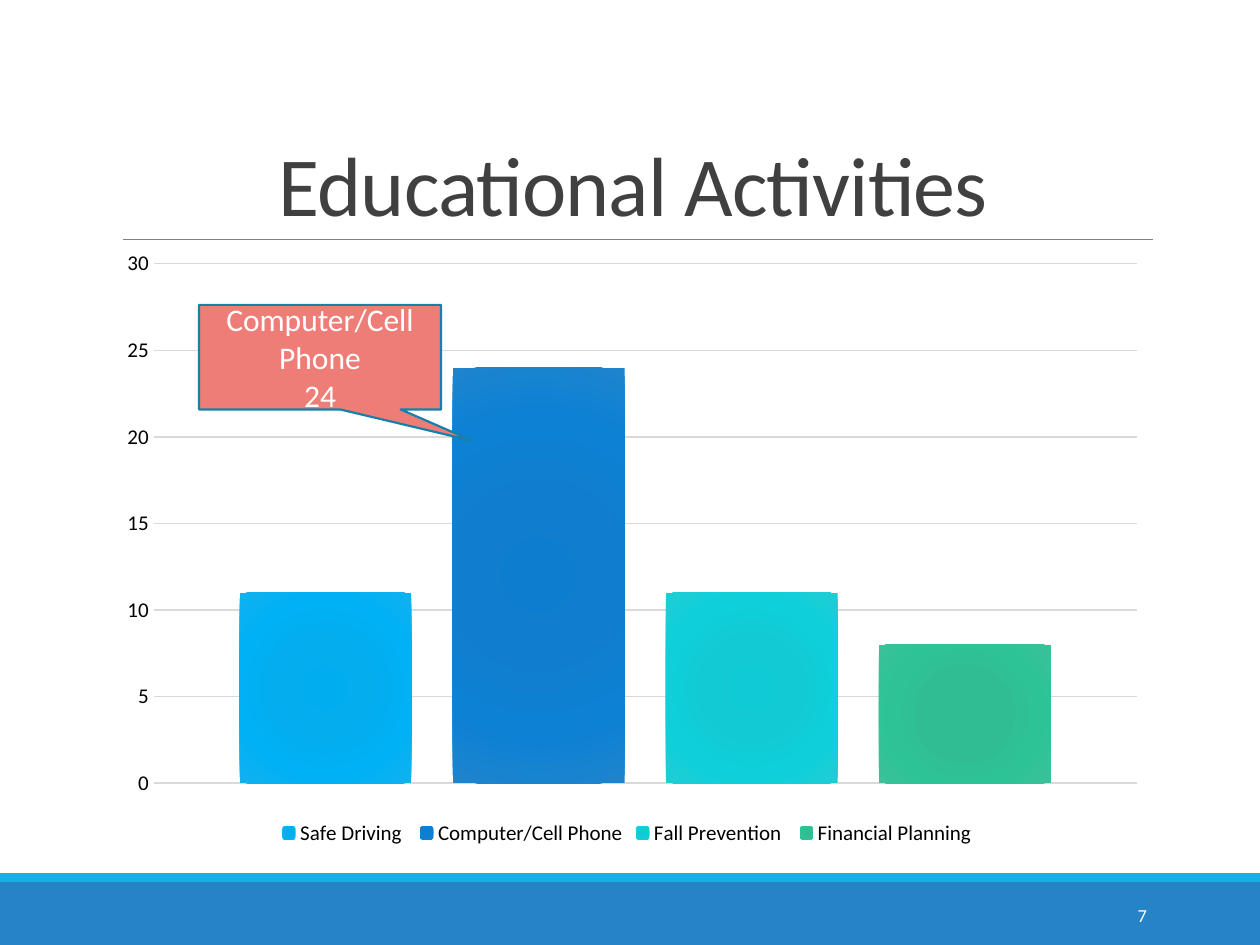
from lxml import etree
from pptx import Presentation
from pptx.chart.data import CategoryChartData
from pptx.dml.color import RGBColor
from pptx.enum.chart import XL_CHART_TYPE, XL_LEGEND_POSITION, XL_TICK_MARK
from pptx.enum.shapes import MSO_CONNECTOR, MSO_SHAPE
from pptx.enum.text import MSO_ANCHOR, PP_ALIGN
from pptx.oxml import parse_xml
from pptx.oxml.ns import nsdecls, qn
from pptx.util import Inches, Pt

FONT = "Calibri"
WHITE = RGBColor(0xFF, 0xFF, 0xFF)
BLACK = RGBColor(0, 0, 0)
TITLE_GRAY = RGBColor(0x40, 0x40, 0x40)
RULE_GRAY = RGBColor(0x80, 0x80, 0x80)
GRID_GRAY = RGBColor(0xD9, 0xD9, 0xD9)
BAND_BLUE = RGBColor(0x26, 0x83, 0xC6)
STRIPE_BLUE = RGBColor(0x1C, 0xAD, 0xE4)
CALLOUT_RED = RGBColor(0xEE, 0x7D, 0x77)
CALLOUT_EDGE = RGBColor(0x15, 0x80, 0xA9)

GRADIENT_STOPS = (0, 34, 70, 100)
ACTIVITIES = [
    ("Safe Driving ", 11, ("00ADEF", "03ADEE", "00B1F5", "12B1EE")),
    ("Computer/Cell Phone", 24, ("0D7ECF", "117ECD", "0D81D4", "1E84CE")),
    ("Fall Prevention ", 11, ("0ECBD5", "12CAD3", "0FD0DA", "20CBD4")),
    ("Financial Planning ", 8, ("2DBE94", "30BD94", "2EC397", "3CC09A")),
]


def inches(*lengths):
    return [Inches(length) for length in lengths]


def write_text(frame, text, size, color, align, anchor, line_spacing=None, tracking=None):
    frame.word_wrap = True
    frame.vertical_anchor = anchor
    frame.text = text
    for paragraph in frame.paragraphs:
        paragraph.alignment = align
        paragraph.line_spacing = line_spacing
        for run in paragraph.runs:
            run.font.name = FONT
            run.font.size = Pt(size)
            run.font.color.rgb = color
            if tracking is not None:
                run.font._element.set("spc", str(int(tracking * 100)))


def style_font(font, size):
    font.name = FONT
    font.size = Pt(size)
    font.color.rgb = BLACK


def add_block(slide, preset, box, fill):
    block = slide.shapes.add_shape(preset, *inches(*box))
    block.shadow.inherit = False
    block.fill.solid()
    block.fill.fore_color.rgb = fill
    block.line.fill.background()
    return block


def add_footer(slide, left, top, width, height):
    stripe = 0.07
    add_block(slide, MSO_SHAPE.RECTANGLE, (left, top + stripe, width, height - stripe), BAND_BLUE)
    add_block(slide, MSO_SHAPE.RECTANGLE, (left, top, width, stripe), STRIPE_BLUE)
    page_number = slide.shapes.add_textbox(*inches(left + 8.12, top + 0.13, 1.08, 0.4))
    write_text(page_number.text_frame, "7", size=10.5, color=WHITE,
               align=PP_ALIGN.RIGHT, anchor=MSO_ANCHOR.MIDDLE)


def add_title(slide, left, top, width, height):
    bottom = top + height
    rule = slide.shapes.add_connector(
        MSO_CONNECTOR.STRAIGHT, *inches(left + 0.08, bottom, left + width, bottom))
    rule.line.color.rgb = RULE_GRAY
    rule.line.width = Pt(0.5)
    etree.SubElement(rule._element.spPr, qn("a:effectLst"))
    title = slide.shapes.add_textbox(*inches(left, top, width, height))
    write_text(title.text_frame, "Educational Activities", size=48, color=TITLE_GRAY,
               align=PP_ALIGN.CENTER, anchor=MSO_ANCHOR.BOTTOM,
               line_spacing=0.85, tracking=-0.5)


def fill_radial(series, colors):
    stops = "".join(
        f'<a:gs pos="{position * 1000}"><a:srgbClr val="{color}"/></a:gs>'
        for position, color in zip(GRADIENT_STOPS, colors))
    series._element.get_or_add_spPr().append(parse_xml(
        f'<a:gradFill {nsdecls("a")} rotWithShape="1"><a:gsLst>{stops}</a:gsLst>'
        '<a:path path="circle"><a:fillToRect l="100000" t="100000" r="100000" b="100000"/>'
        '</a:path></a:gradFill>'))


def set_plot_layout(chart, x, y, w, h):
    plot_area = chart._chartSpace.chart.plotArea
    for layout in plot_area.findall(qn("c:layout")):
        plot_area.remove(layout)
    modes = '<c:xMode val="edge"/><c:yMode val="edge"/>'
    sizes = "".join(f'<c:{key} val="{value}"/>'
                    for key, value in zip("xywh", (x, y, w, h)))
    plot_area.insert(0, parse_xml(
        f'<c:layout {nsdecls("c")}><c:manualLayout><c:layoutTarget val="inner"/>'
        f'{modes}{sizes}</c:manualLayout></c:layout>'))


def add_activity_chart(slide, left, top, width, height):
    data = CategoryChartData()
    data.categories = ["1"]
    for name, count, _ in ACTIVITIES:
        data.add_series(name, [count])
    chart = slide.shapes.add_chart(
        XL_CHART_TYPE.COLUMN_CLUSTERED, *inches(left, top, width, height), data).chart
    style_font(chart.font, 10)
    chart.has_title = False
    chart.has_legend = True
    chart.legend.position = XL_LEGEND_POSITION.BOTTOM
    chart.legend.include_in_layout = False
    style_font(chart.legend.font, 12)

    chart.category_axis.visible = False
    counts = chart.value_axis
    counts.minimum_scale = 0
    counts.maximum_scale = 30
    counts.major_unit = 5
    counts.major_tick_mark = XL_TICK_MARK.NONE
    counts.minor_tick_mark = XL_TICK_MARK.NONE
    counts.format.line.fill.background()
    counts.major_gridlines.format.line.color.rgb = GRID_GRAY
    counts.major_gridlines.format.line.width = Pt(0.75)
    style_font(counts.tick_labels.font, 12)

    columns = chart.plots[0]
    columns.vary_by_categories = False
    columns.gap_width = 100
    columns.overlap = -24
    for series, (_, _, colors) in zip(columns.series, ACTIVITIES):
        fill_radial(series, colors)
    set_plot_layout(chart, 0.05, 0.04, 0.93, 0.85)


def add_callout(slide, left, top, width, height):
    callout = add_block(slide, MSO_SHAPE.RECTANGULAR_CALLOUT,
                        (left, top, width, height), CALLOUT_RED)
    callout.adjustments[0] = 0.63
    callout.adjustments[1] = 0.8
    callout.line.color.rgb = CALLOUT_EDGE
    callout.line.width = Pt(1.25)
    write_text(callout.text_frame, "Computer/Cell Phone\n24", size=18, color=WHITE,
               align=PP_ALIGN.CENTER, anchor=MSO_ANCHOR.MIDDLE)


def main():
    presentation = Presentation()
    presentation.slide_width, presentation.slide_height = inches(10, 7.5)
    slide = presentation.slides.add_slide(presentation.slide_layouts[6])
    add_footer(slide, 0, 6.93, 10, 0.57)
    add_title(slide, 0.9, 0.31, 8.25, 1.59)
    add_activity_chart(slide, 0.8, 1.9, 8.39, 4.85)
    add_callout(slide, 1.58, 2.42, 1.92, 0.83)
    presentation.save("out.pptx")


if __name__ == "__main__":
    main()
